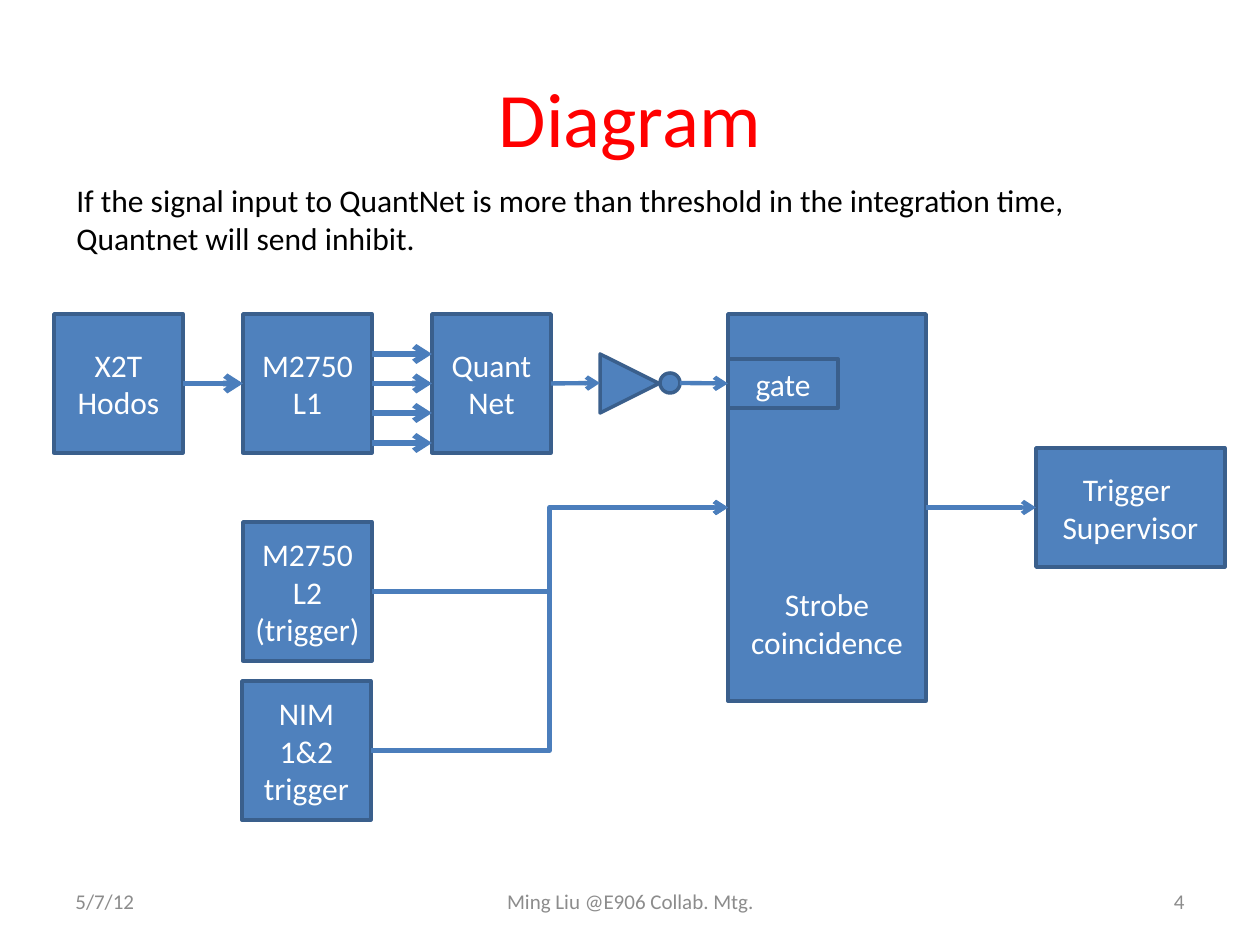
from pptx import Presentation
from pptx import util as u
from pptx.dml.color import RGBColor
from pptx.enum import shapes, text
from pptx.oxml.ns import qn
from lxml import etree

SCALE = 914400 / 126
FONT = "Calibri"
COLORS = {
    "title": "FF0000",
    "body": "000000",
    "footer": "8C8C8C",
    "box": "4F81BD",
    "outline": "3A5F8C",
    "wire": "4B7EBC",
    "label": "FFFFFF",
}
LEFT, CENTER, RIGHT = text.PP_ALIGN.LEFT, text.PP_ALIGN.CENTER, text.PP_ALIGN.RIGHT
RECT = shapes.MSO_SHAPE.RECTANGLE
STRAIGHT, ELBOW = shapes.MSO_CONNECTOR.STRAIGHT, shapes.MSO_CONNECTOR.ELBOW
MIDDLE, TOP, BOTTOM = text.MSO_ANCHOR.MIDDLE, text.MSO_ANCHOR.TOP, text.MSO_ANCHOR.BOTTOM


def px(n):
    return u.Emu(round(n * SCALE))


def rgb(name):
    return RGBColor.from_string(COLORS[name])


def write(sp, words, size, color, align, anchor=MIDDLE):
    tf = sp.text_frame
    tf.word_wrap = True
    tf.vertical_anchor = anchor
    tf.text = words
    for p in tf.paragraphs:
        p.alignment = align
        for r in p.runs:
            r.font.size = u.Pt(size)
            r.font.name = FONT
            r.font.color.rgb = rgb(color)


def add_title(s, words):
    sp = s.shapes.title
    sp.left, sp.top, sp.width, sp.height = map(px, (63, 38, 1134, 158))
    write(sp, words, 44, "title", CENTER)


def add_text(s, words, at, size, color, align=LEFT, anchor=MIDDLE):
    sp = s.shapes.add_textbox(*map(px, at))
    write(sp, words, size, color, align, anchor)


def add_solid(parent, kind, at):
    sp = parent.shapes.add_shape(kind, *map(px, at))
    sp.shadow.inherit = False
    sp.fill.solid()
    sp.fill.fore_color.rgb = rgb("box")
    sp.line.color.rgb = rgb("outline")
    sp.line.width = u.Pt(2)
    return sp


def add_box(s, words, at, anchor=MIDDLE):
    sp = add_solid(s, RECT, at)
    write(sp, words, 18, "label", CENTER, anchor)
    return sp


def add_inverter(s):
    group = s.shapes.add_group_shape()
    add_solid(group, shapes.MSO_SHAPE.ISOSCELES_TRIANGLE, (600, 354, 59, 59)).rotation = 90
    add_solid(group, shapes.MSO_SHAPE.OVAL, (660, 373, 20, 20))


def add_arrow(s, ends, width, begin=None, end=None, kind=STRAIGHT):
    c = s.shapes.add_connector(kind, *map(px, ends))
    if begin:
        c.begin_connect(begin, 3)
    if end:
        c.end_connect(end, 1)
    c.line.color.rgb = rgb("wire")
    c.line.width = u.Pt(width)
    etree.SubElement(c.line._get_or_add_ln(), qn("a:tailEnd"), type="arrow")
    etree.SubElement(c._element.spPr, qn("a:effectLst"))


def main():
    prs = Presentation()
    prs.slide_width, prs.slide_height = px(1260), px(945)
    s = prs.slides.add_slide(prs.slide_layouts[5])

    add_title(s, "Diagram")
    add_text(s, "If the signal input to QuantNet is more than threshold in the "
             "integration time, Quantnet will send inhibit.",
             (64, 175, 1022, 127), 18, "body", anchor=TOP)

    hodos = add_box(s, "X2T\vHodos", (54, 314, 129, 139))
    level1 = add_box(s, "M2750\vL1", (243, 314, 129, 139))
    quant = add_box(s, "QuantNet", (432, 314, 119, 139))
    level2 = add_box(s, "M2750\vL2\n(trigger)", (243, 522, 129, 139))
    nim = add_box(s, "NIM 1&2\ntrigger", (242, 681, 129, 139))
    strobe = add_box(s, "Strobe\vcoincidence", (728, 314, 198, 387), BOTTOM)
    strobe.text_frame.margin_bottom = px(40)
    gate = add_box(s, "gate", (728, 359, 110, 49))
    supervisor = add_box(s, "Trigger \nSupervisor", (1036, 448, 189, 119))
    add_inverter(s)

    add_arrow(s, (183, 383, 243, 383), 3.25, hodos, level1)
    add_arrow(s, (372, 383, 432, 383), 3.25, level1, quant)
    for y in (354, 413, 443):
        add_arrow(s, (372, y, 432, y), 3.25)
    add_arrow(s, (551, 383, 600, 383), 2.5, begin=quant)
    add_arrow(s, (680, 383, 728, 384), 2.5, end=gate)
    add_arrow(s, (926, 507, 1036, 507), 2.5, strobe, supervisor)
    add_arrow(s, (372, 591, 728, 507), 2.5, level2, strobe, ELBOW)
    add_arrow(s, (371, 750, 728, 507), 2.5, nim, strobe, ELBOW)

    for words, x, w, align in (("5/7/12", 63, 294, LEFT),
                               ("Ming Liu @E906 Collab. Mtg.", 431, 399, CENTER),
                               ("4", 903, 294, RIGHT)):
        add_text(s, words, (x, 876, w, 50), 12, "footer", align)

    prs.save("out.pptx")


if __name__ == "__main__":
    main()
